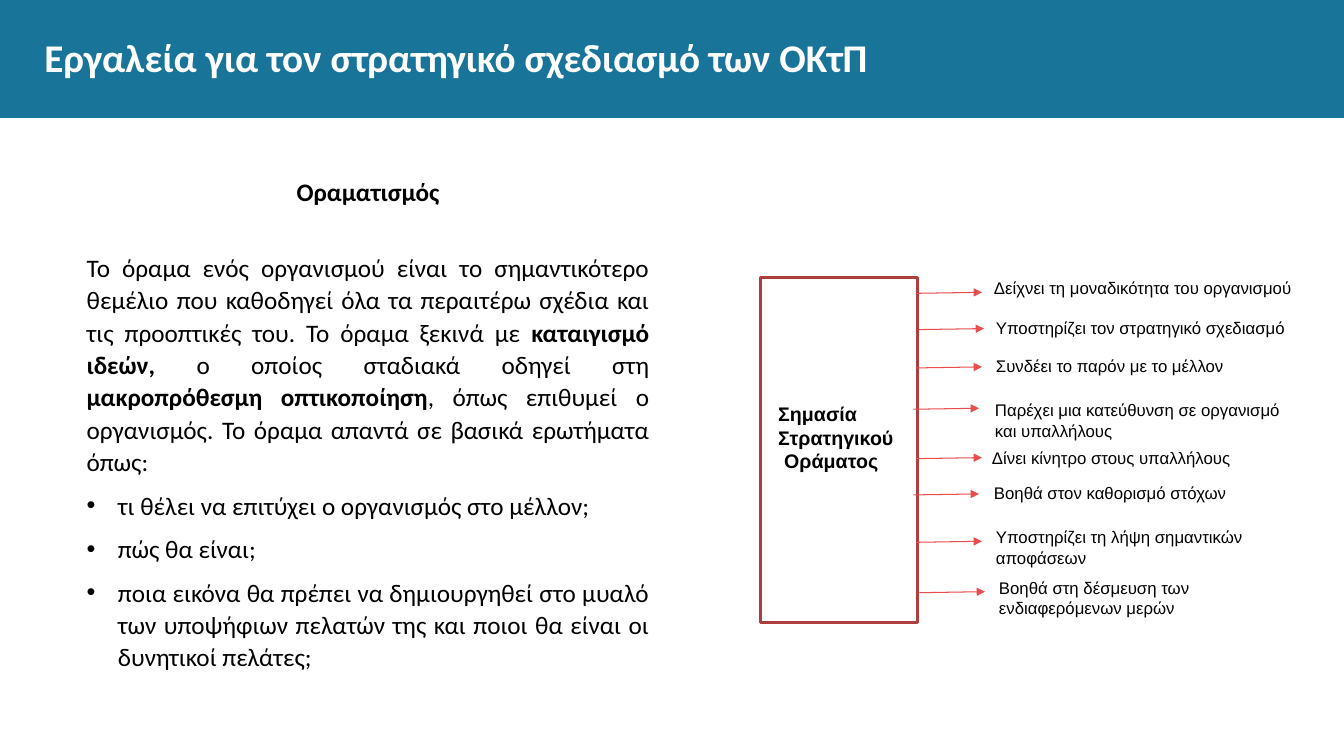
import pptx
import pptx.dml.color
import pptx.enum.shapes
import pptx.enum.text
import pptx.oxml.ns
import pptx.util
from lxml import etree

Inches = pptx.util.Inches
Pt = pptx.util.Pt
Align = pptx.enum.text.PP_ALIGN
Anchor = pptx.enum.text.MSO_ANCHOR

BANNER, FRAME, ARROW = "187498", "AE3D3D", "EA4D4D"
BLACK, WHITE = "000000", "FFFFFF"
ARROW_LENGTH, ARROW_RISE = 0.65, 0.01
BULLET_INDENT, BULLET_HANG = 0.31, 0.33

TITLE = "Εργαλεία για τον στρατηγικό σχεδιασμό των ΟΚτΠ"
HEADING = "Οραματισμός"
# (text, bold)
VISION = [
    ("Το όραμα ενός οργανισμού είναι το σημαντικότερο θεμέλιο που καθοδηγεί όλα τα "
     "περαιτέρω σχέδια και τις προοπτικές του. Το όραμα ξεκινά με ", False),
    ("καταιγισμό ιδεών, ", True),
    ("ο οποίος σταδιακά οδηγεί στη ", False),
    ("μακροπρόθεσμη οπτικοποίηση", True),
    (", όπως επιθυμεί ο οργανισμός. Το όραμα απαντά σε βασικά ερωτήματα όπως:", False),
]
QUESTIONS = [
    "τι θέλει να επιτύχει ο οργανισμός στο μέλλον;",
    "πώς θα είναι;",
    "ποια εικόνα θα πρέπει να δημιουργηθεί στο μυαλό των υποψήφιων πελατών της "
    "και ποιοι θα είναι οι δυνητικοί πελάτες;",
]
# (text, left indent)
FRAME_LABEL = [("Σημασία", 0), ("Στρατηγικού", 0), ("Οράματος", 0.06)]
# (text, text left, text top, text width, text height, arrow left, arrow start height)
REASONS = [
    ("Δείχνει τη μοναδικότητα του οργανισμού", 9.76, 2.71, 3.43, 0.3, 9.09, 2.91),
    ("Υποστηρίζει τον στρατηγικό σχεδιασμό", 9.78, 3.1, 3.24, 0.3, 9.11, 3.27),
    ("Συνδέει το παρόν με το μέλλον", 9.78, 3.48, 3.24, 0.3, 9.09, 3.65),
    ("Παρέχει μια κατεύθυνση σε οργανισμό και υπαλλήλους",
     9.77, 3.92, 3.24, 0.5, 9.06, 4.06),
    ("Δίνει κίνητρο στους υπαλλήλους", 9.74, 4.39, 3.24, 0.3, 9.09, 4.55),
    ("Βοηθά στον καθορισμό στόχων", 9.76, 4.74, 3.24, 0.3, 9.06, 4.91),
    ("Υποστηρίζει τη λήψη σημαντικών αποφάσεων",
     9.78, 5.18, 3.24, 0.5, 9.09, 5.38),
    ("Βοηθά στη δέσμευση των ενδιαφερόμενων μερών",
     9.81, 5.68, 3.24, 0.5, 9.12, 5.88),
]


def color(value):
    return pptx.dml.color.RGBColor.from_string(value)


def place(shape, left, top, width, height):
    shape.left, shape.top = Inches(left), Inches(top)
    shape.width, shape.height = Inches(width), Inches(height)


def add_span(para, text, size, font="Arial", bold=False, shade=BLACK):
    span = para.add_run()
    span.text = text
    span.font.size, span.font.name, span.font.bold = Pt(size), font, bold
    span.font.color.rgb = color(shade)


def add_child(parent, tag, **attributes):
    return etree.SubElement(parent, pptx.oxml.ns.qn(tag), attributes)


def prepare_frame(box, anchor=Anchor.TOP, margins=(0.1, 0.05)):
    frame = box.text_frame
    frame.word_wrap = True
    frame.auto_size = pptx.enum.text.MSO_AUTO_SIZE.NONE
    frame.vertical_anchor = anchor
    frame.margin_left = frame.margin_right = Inches(margins[0])
    frame.margin_top = frame.margin_bottom = Inches(margins[1])
    return frame


def next_para(frame):
    """Return the empty first paragraph, or a new one."""
    first = frame.paragraphs[0]
    return frame.add_paragraph() if first.runs else first


def add_rectangle(page, left, top, width, height):
    shape = page.shapes.add_shape(
        pptx.enum.shapes.MSO_SHAPE.RECTANGLE,
        Inches(left), Inches(top), Inches(width), Inches(height))
    shape.shadow.inherit = False
    return shape


def add_text_box(page, left, top, width, height):
    return prepare_frame(page.shapes.add_textbox(
        Inches(left), Inches(top), Inches(width), Inches(height)))


def add_body_para(frame, spans, align, before, bullet=False):
    para = next_para(frame)
    para.alignment, para.line_spacing = align, 1.07
    para.space_before, para.space_after = Pt(before), Pt(0)
    settings = para._p.get_or_add_pPr()
    settings.set("marL", str(Inches(BULLET_INDENT if bullet else 0)))
    settings.set("indent", str(Inches(-BULLET_HANG if bullet else 0)))
    if bullet:
        add_child(add_child(settings, "a:buClr"), "a:srgbClr", val=BLACK)
        add_child(settings, "a:buFont", typeface="Arial")
        add_child(settings, "a:buChar", char="•")
    else:
        add_child(settings, "a:buNone")
    for text, bold in spans:
        add_span(para, text, 18, "Calibri", bold)


def add_arrow(page, left, top):
    arrow = page.shapes.add_connector(
        pptx.enum.shapes.MSO_CONNECTOR.STRAIGHT, Inches(left), Inches(top),
        Inches(left + ARROW_LENGTH), Inches(top - ARROW_RISE))
    arrow.line.color.rgb = color(ARROW)
    arrow.line.width = Pt(0.75)
    add_child(arrow.line._get_or_add_ln(), "a:tailEnd", type="triangle")
    add_child(arrow.element.spPr, "a:effectLst")


def add_header(page):
    banner = add_rectangle(page, 0, 0, 13.33, 1.17)
    banner.fill.solid()
    banner.fill.fore_color.rgb = color(BANNER)
    banner.line.fill.background()
    title = page.shapes.title
    title.element.addprevious(banner.element)
    place(title, 0.44, 0.19, 12.46, 0.74)
    para = prepare_frame(title, Anchor.MIDDLE, (0, 0)).paragraphs[0]
    para.alignment = Align.LEFT
    add_span(para, TITLE, 28, "Calibri", True, WHITE)


def add_vision(page):
    body = page.placeholders[1]
    place(body, 0.76, 1.68, 5.78, 5.09)
    frame = prepare_frame(body)
    add_body_para(frame, [(HEADING, True)], Align.CENTER, 0)
    add_body_para(frame, VISION, Align.JUSTIFY, 31)
    for question in QUESTIONS:
        add_body_para(frame, [(question, False)], Align.JUSTIFY, 8, bullet=True)


def add_reasons(page):
    outline = add_rectangle(page, 7.54, 2.75, 1.56, 3.43)
    outline.fill.background()
    outline.line.color.rgb = color(FRAME)
    outline.line.width = Pt(2)
    label = add_text_box(page, 7.62, 3.94, 1.44, 0.81)
    for text, indent in FRAME_LABEL:
        para = next_para(label)
        para._p.get_or_add_pPr().set("marL", str(Inches(indent)))
        add_span(para, text, 14, bold=True)
    for text, left, top, width, height, arrow_left, arrow_top in REASONS:
        add_arrow(page, arrow_left, arrow_top)
        frame = add_text_box(page, left, top, width, height)
        add_span(frame.paragraphs[0], text, 12)


def main():
    deck = pptx.Presentation()
    deck.slide_width, deck.slide_height = Inches(13.33), Inches(7.5)
    page = deck.slides.add_slide(deck.slide_layouts[1])
    add_header(page)
    add_vision(page)
    add_reasons(page)
    deck.save("out.pptx")


if __name__ == "__main__":
    main()
